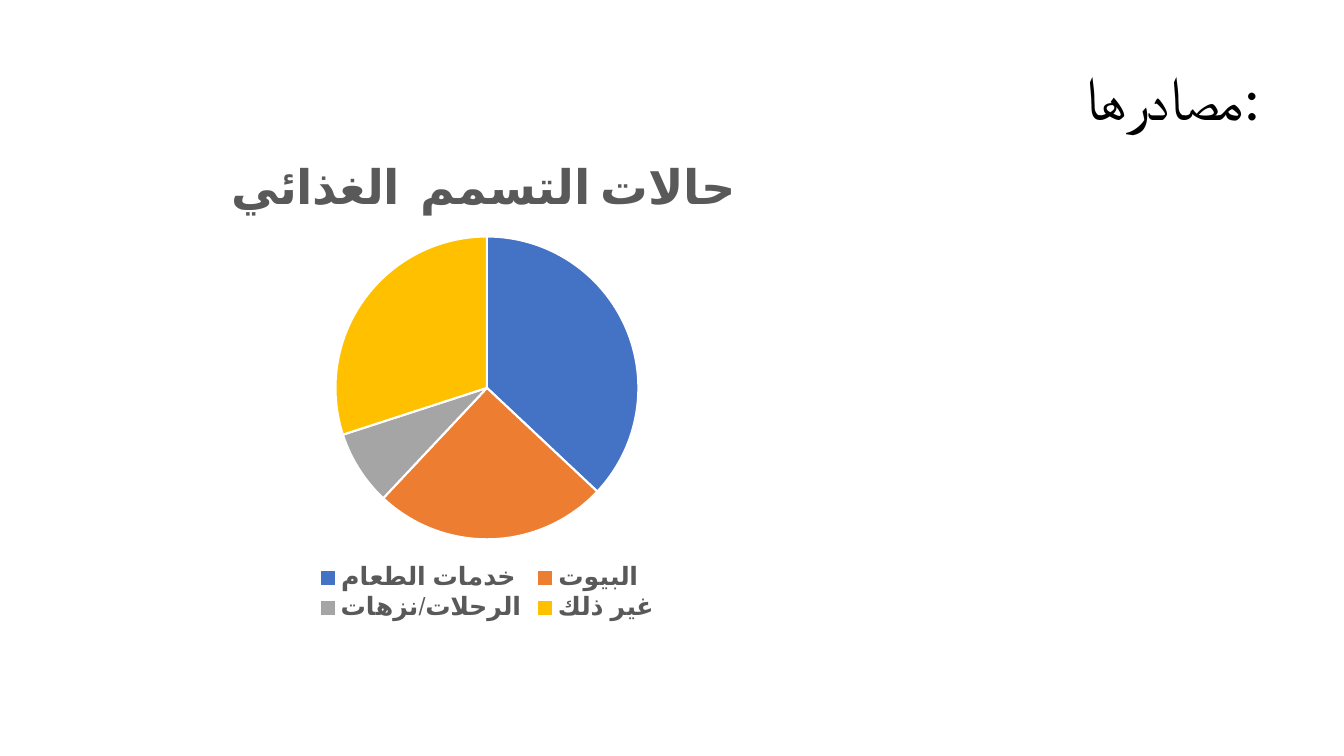
from dataclasses import dataclass

from lxml.etree import SubElement
from pptx import Presentation
from pptx.chart.data import CategoryChartData
from pptx.dml.color import RGBColor
from pptx.enum.chart import XL_CHART_TYPE, XL_LEGEND_POSITION
from pptx.enum.text import MSO_ANCHOR, PP_ALIGN
from pptx.oxml.ns import qn
from pptx.util import Emu, Pt

EMU_PER_PX = 9144


def px(length):
    return Emu(length * EMU_PER_PX)


@dataclass(frozen=True)
class Theme:
    font: str = "Calibri"
    ink: str = "000000"
    muted: str = "595959"
    paper: str = "FFFFFF"
    slices: tuple = ("4472C4", "ED7D31", "A5A5A5", "FFC000")
    heading_size: int = 44
    chart_title_size: int = 34
    legend_size: int = 18


def style_font(font, theme, size, color, bold=False):
    font.name = theme.font
    font.size = Pt(size)
    font.bold = bold
    font.color.rgb = RGBColor.from_string(color)


def write_text(frame, text, *, theme, align, spacing=1.0, **font_format):
    paragraph = frame.paragraphs[0]
    paragraph.alignment = align
    paragraph.line_spacing = spacing
    run = paragraph.add_run()
    run.text = text
    style_font(run.font, theme, **font_format)
    # Arabic letters take the complex-script typeface
    SubElement(run._r.get_or_add_rPr(), qn("a:cs")).set("typeface", theme.font)


def place_in_chart(layout, **settings):
    """Fix a chart part by modes and by fractions of the chart's size."""
    manual = SubElement(layout, qn("c:manualLayout"))
    for name, value in settings.items():
        SubElement(manual, qn(f"c:{name}")).set("val", str(value))


def layout_of(parent, index):
    """Return the layout element of a chart part, adding it at index if missing."""
    layout = parent.find(qn("c:layout"))
    if layout is None:
        layout = SubElement(parent, qn("c:layout"))
        parent.insert(index, layout)
    return layout


class SlideBuilder:
    def __init__(self, slide, theme):
        self.slide = slide
        self.theme = theme

    def heading(self, text, left, top, width, height):
        box = self.slide.shapes.add_textbox(px(left), px(top), px(width), px(height))
        frame = box.text_frame
        frame.word_wrap = True
        frame.vertical_anchor = MSO_ANCHOR.MIDDLE
        write_text(frame, text, align=PP_ALIGN.RIGHT, spacing=0.9, theme=self.theme,
                   size=self.theme.heading_size, color=self.theme.ink)

    def pie(self, title, shares, left, top, width, height):
        theme = self.theme
        data = CategoryChartData()
        data.categories = list(shares)
        data.add_series("Series 1", list(shares.values()))
        chart = self.slide.shapes.add_chart(
            XL_CHART_TYPE.PIE, px(left), px(top), px(width), px(height), data).chart
        style_font(chart.font, theme, 10, theme.ink)

        chart.has_title = True
        write_text(chart.chart_title.text_frame, title, align=PP_ALIGN.CENTER, theme=theme,
                   size=theme.chart_title_size, color=theme.muted, bold=True)
        chart.chart_title.include_in_layout = False
        place_in_chart(layout_of(chart.chart_title._element, 1),
                       xMode="edge", yMode="edge", x=0.12, y=0)

        chart.has_legend = True
        chart.legend.position = XL_LEGEND_POSITION.BOTTOM
        chart.legend.include_in_layout = False
        style_font(chart.legend.font, theme, theme.legend_size, theme.muted, bold=True)

        plot = chart.plots[0]
        plot.vary_by_categories = True
        for index, color in enumerate(theme.slices):
            piece = plot.series[0].points[index].format
            piece.fill.solid()
            piece.fill.fore_color.rgb = RGBColor.from_string(color)
            piece.line.color.rgb = RGBColor.from_string(theme.paper)
            piece.line.width = Pt(1.5)
        place_in_chart(layout_of(plot._element.getparent(), 0), layoutTarget="inner",
                       xMode="edge", yMode="edge", x=0.28, y=0.19, w=0.44, h=0.63)


def main():
    deck = Presentation()
    deck.slide_width, deck.slide_height = px(1333), px(750)
    builder = SlideBuilder(deck.slides.add_slide(deck.slide_layouts[6]), Theme())
    builder.heading("مصادرها:", 110, 27, 1150, 145)
    poisoning_sources = {
        "خدمات الطعام": 37,
        "البيوت": 25,
        "الرحلات/نزهات": 8,
        "غير ذلك": 30,
    }
    builder.pie("حالات التسمم  الغذائي", poisoning_sources, 138, 144, 690, 477)
    deck.save("out.pptx")


if __name__ == "__main__":
    main()
